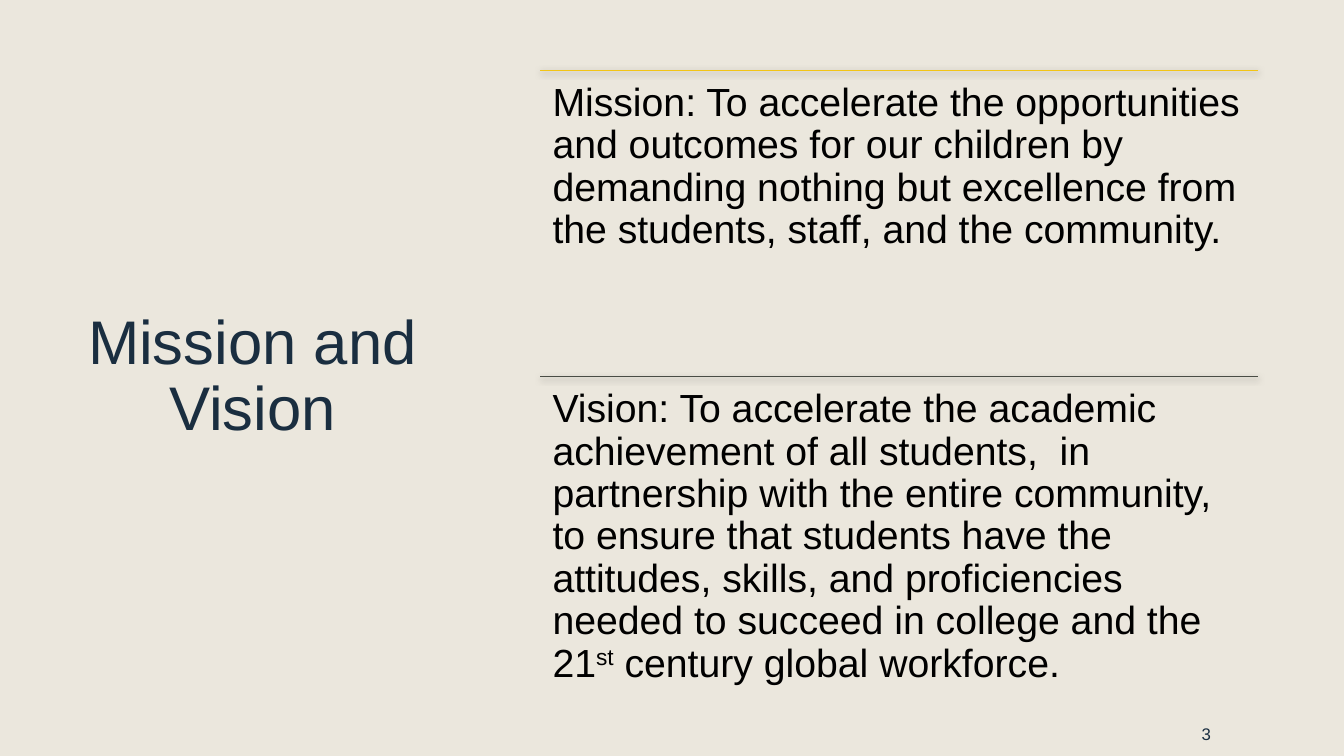
from dataclasses import dataclass

from pptx import Presentation
from pptx.dml.color import RGBColor
from pptx.enum.shapes import MSO_CONNECTOR, MSO_SHAPE
from pptx.enum.text import MSO_ANCHOR, MSO_AUTO_SIZE, PP_ALIGN
from pptx.oxml import parse_xml
from pptx.oxml.ns import nsdecls
from pptx.util import Inches, Pt

STRAIGHT, RECTANGLE = MSO_CONNECTOR.STRAIGHT, MSO_SHAPE.RECTANGLE
TOP, MIDDLE = MSO_ANCHOR.TOP, MSO_ANCHOR.MIDDLE
LEFT, CENTER, RIGHT = PP_ALIGN.LEFT, PP_ALIGN.CENTER, PP_ALIGN.RIGHT
NO_AUTOFIT = MSO_AUTO_SIZE.NONE


@dataclass(frozen=True)
class Theme:
    font: str = "Arial"
    background: RGBColor = RGBColor.from_string("EBE7DD")
    navy: RGBColor = RGBColor.from_string("1A2E40")
    black: RGBColor = RGBColor.from_string("000000")
    gold: RGBColor = RGBColor.from_string("F2C415")
    gray: RGBColor = RGBColor.from_string("4A4D45")
    title_size: Pt = Pt(44)
    body_size: Pt = Pt(28)
    number_size: Pt = Pt(12)
    rule_width: Pt = Pt(0.75)


THEME = Theme()

RULE_SHADOW = f"""<a:effectLst {nsdecls('a')}>
  <a:outerShdw blurRad="{Pt(4.5)}" dist="{Pt(1.5)}" dir="5400000" algn="ctr" rotWithShape="0">
    <a:srgbClr val="000000"><a:alpha val="31000"/></a:srgbClr>
  </a:outerShdw>
</a:effectLst>"""


def set_frame(sp, anchor, inset_x, inset_y):
    tf = sp.text_frame
    values = dict(
        word_wrap=True, auto_size=NO_AUTOFIT, vertical_anchor=anchor,
        margin_left=Inches(inset_x), margin_right=Inches(inset_x),
        margin_top=Inches(inset_y), margin_bottom=Inches(inset_y))
    for name, value in values.items():
        setattr(tf, name, value)
    return tf


def set_paragraph(p, align, spacing, size, color):
    p.alignment = align
    p.line_spacing = spacing
    for r in p.runs:
        for name, value in dict(name=THEME.font, size=size, bold=False).items():
            setattr(r.font, name, value)
        r.font.color.rgb = color


prs = Presentation()
prs.slide_width, prs.slide_height = Inches(13.33), Inches(7.5)
slide = prs.slides.add_slide(prs.slide_layouts[5])

# Backdrop, behind the title
backdrop = slide.shapes.add_shape(RECTANGLE, 0, 0, prs.slide_width, prs.slide_height)
backdrop.shadow.inherit = False
backdrop.line.fill.background()
for fill in (slide.background.fill, backdrop.fill):
    fill.solid()
    fill.fore_color.rgb = THEME.background
title = slide.shapes.title
title._element.addprevious(backdrop._element)

# Title
title.left, title.top = Inches(0.7), Inches(0.7)
title.width, title.height = Inches(3.61), Inches(6.1)
tf = set_frame(title, MIDDLE, 0.1, 0.05)
tf.text = "Mission and Vision"
set_paragraph(tf.paragraphs[0], CENTER, 0.89, THEME.title_size, THEME.navy)

# Slide number
number = slide.shapes.add_textbox(Inches(10.36), Inches(7.06), Inches(1.75), Inches(0.44))
tf = set_frame(number, MIDDLE, 0.1, 0.05)
tf.text = "3"
set_paragraph(tf.paragraphs[0], RIGHT, 1.0, THEME.number_size, THEME.navy)

# Statements: a rule with its text below; each run is (text, is superscript)
STATEMENTS = [
    (THEME.gold, [
        ("Mission: To accelerate the opportunities and outcomes for our children "
         "by demanding nothing but excellence from the students, staff, and the "
         "community.", False)]),
    (THEME.gray, [
        ("Vision: To accelerate the academic achievement of all students,  in "
         "partnership with the entire community, to ensure that students have "
         "the attitudes, skills, and proficiencies needed to succeed in college "
         "and the 21", False),
        ("st", True),
        (" century global workforce.", False)]),
]
left, width, height = Inches(5.36), Inches(7.12), Inches(3.04)

for i, (color, runs) in enumerate(STATEMENTS):
    top = Inches(0.7) + i * height
    rule = slide.shapes.add_connector(STRAIGHT, left, top, left + width, top)
    rule.line.color.rgb = color
    rule.line.width = THEME.rule_width
    rule._element.spPr.append(parse_xml(RULE_SHADOW))

    statement = slide.shapes.add_textbox(left, top, width, height)
    p = set_frame(statement, TOP, 0.12, 0.12).paragraphs[0]
    for text, is_superscript in runs:
        r = p.add_run()
        r.text = text
        if is_superscript:
            r.font._element.set("baseline", "30000")
    set_paragraph(p, LEFT, 0.9, THEME.body_size, THEME.black)

prs.save("out.pptx")
